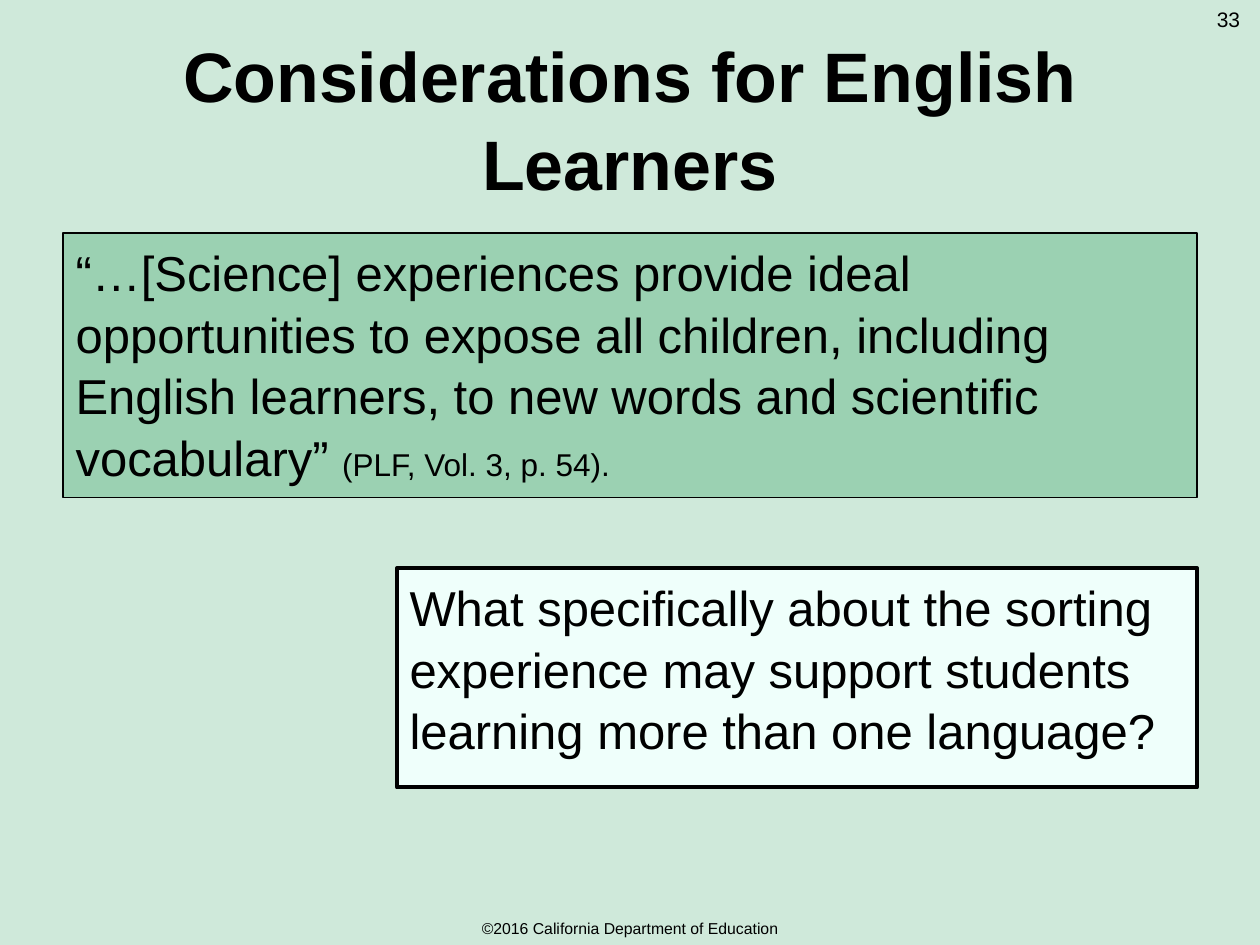
from pptx import Presentation
from pptx import util as u
from pptx.dml.color import RGBColor
from pptx.enum import text
from pptx.oxml.ns import qn
from lxml import etree

COLORS = {"bg": "CFE9DA", "quote": "9BD1B2", "question": "EFFFFB", "ink": "000000"}
FONT = "Arial"
LINE_SPACING = 1.05
RIGHT = 9.5

TITLE = "Considerations for English Learners"
# fill, (left, top, height), line width, runs of (text, size)
PANELS = [
    ("quote", (0.5, 1.85, 2.1), 0.75, [
        ("“…[Science] experiences provide ideal opportunities to expose all children, "
         "including English learners, to new words and scientific vocabulary” ", 28),
        ("(PLF, Vol. 3, p. 54).", 18)]),
    ("question", (3.15, 4.51, 1.74), 2.25, [
        ("What specifically about the sorting experience may support students "
         "learning more than one language?", 28)]),
]
# text, size, box, anchor
LABELS = [
    ("©2016 California Department of Education", 9, (0, 7.24, 10, 0.25), "MIDDLE"),
    ("33", 12, (9.5, 0, 0.5, 0.4), "TOP"),
]


def rgb(name):
    return RGBColor.from_string(COLORS[name])


def place(sp, box):
    sp.left, sp.top, sp.width, sp.height = [u.Inches(v) for v in box]


def write(sp, runs, align, anchor, bold=False):
    tf = sp.text_frame
    tf.word_wrap = True
    tf.auto_size = text.MSO_AUTO_SIZE.NONE
    tf.vertical_anchor = text.MSO_ANCHOR[anchor]
    p = tf.paragraphs[0]
    p.alignment = text.PP_ALIGN[align]
    p.space_before = u.Pt(0)
    for content, size in runs:
        r = p.add_run()
        r.text = content
        r.font.name, r.font.size, r.font.bold = FONT, u.Pt(size), bold
        r.font.color.rgb = rgb("ink")
    return p


def remove_bullet(p):
    pPr = p._p.get_or_add_pPr()
    pPr.set("marL", "0")
    pPr.set("indent", "0")
    etree.SubElement(pPr, qn("a:buNone"))


prs = Presentation()
prs.slide_width, prs.slide_height = u.Inches(10), u.Inches(7.5)
s = prs.slides.add_slide(prs.slide_layouts.get_by_name("Two Content"))
s.background.fill.solid()
s.background.fill.fore_color.rgb = rgb("bg")

title = s.shapes.title
place(title, (0.5, 0.3, 9, 1.25))
write(title, [(TITLE, 40)], "CENTER", "MIDDLE", bold=True).line_spacing = LINE_SPACING

for idx, (fill, (left, top, height), line, runs) in enumerate(PANELS, 1):
    sp = s.placeholders[idx]
    place(sp, (left, top, RIGHT - left, height))
    sp.fill.solid()
    sp.fill.fore_color.rgb = rgb(fill)
    sp.line.color.rgb = rgb("ink")
    sp.line.width = u.Pt(line)
    p = write(sp, runs, "LEFT", "TOP")
    p.line_spacing = LINE_SPACING
    remove_bullet(p)

for content, size, box, anchor in LABELS:
    tb = s.shapes.add_textbox(*[u.Inches(v) for v in box])
    write(tb, [(content, size)], "CENTER", anchor)

prs.save("out.pptx")
